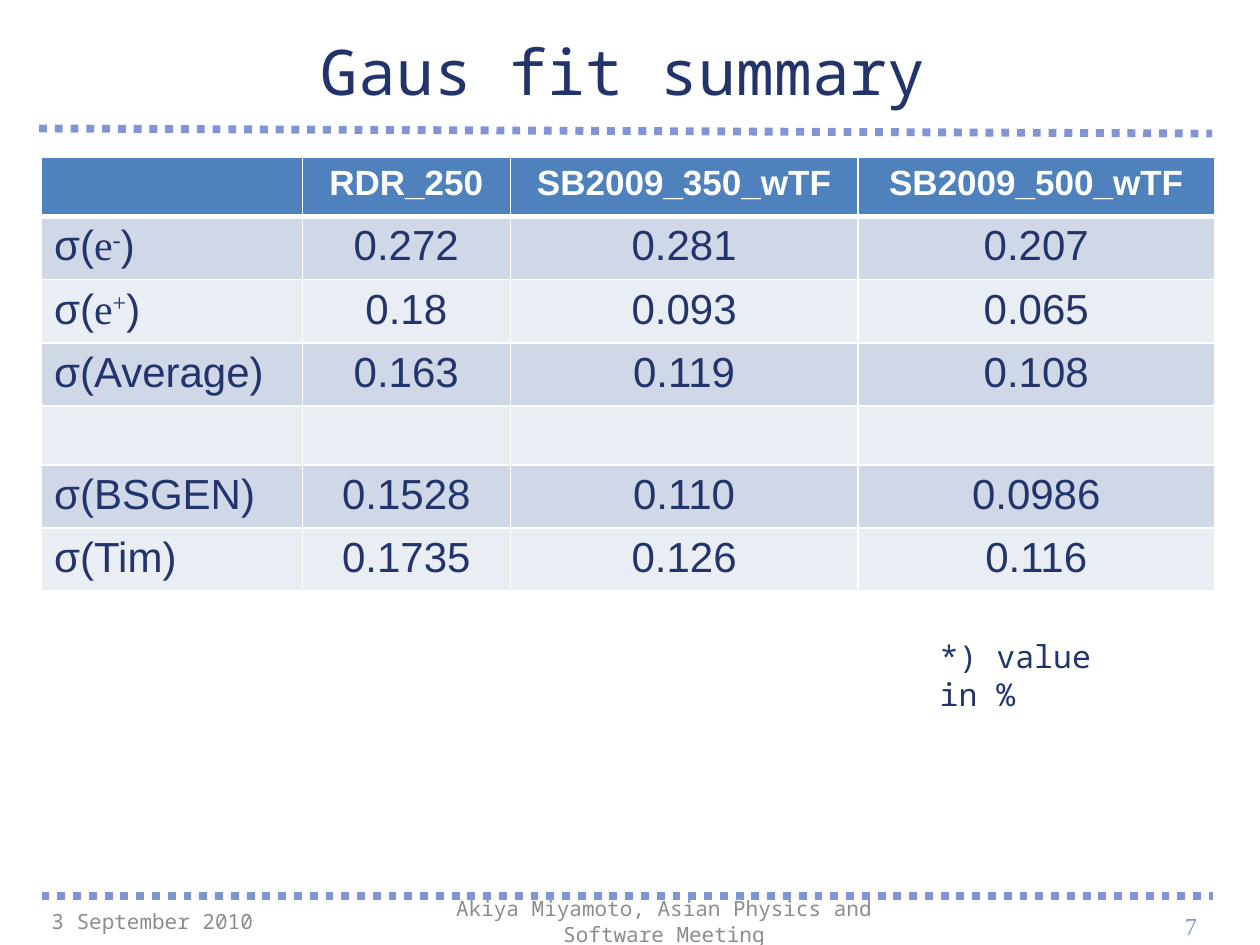
from lxml import etree
from pptx import Presentation
from pptx.dml.color import RGBColor
from pptx.enum import dml, shapes, text
from pptx.oxml import ns
from pptx.util import Inches, Pt

NAVY = RGBColor(0x23, 0x34, 0x6C)
PERIWINKLE = RGBColor(0x80, 0x94, 0xD6)
GRAY = RGBColor(0x8C, 0x8C, 0x8C)
WHITE = RGBColor(0xFF, 0xFF, 0xFF)
HEADER = RGBColor(0x4F, 0x81, 0xBD)
BANDS = RGBColor(0xE9, 0xED, 0xF4), RGBColor(0xD0, 0xD8, 0xE8)
MONO, SANS, SERIF = "Noto Sans Mono", "Arial", "Times New Roman"
LEFT, CENTER, RIGHT = text.PP_ALIGN.LEFT, text.PP_ALIGN.CENTER, text.PP_ALIGN.RIGHT
TOP, MIDDLE = text.MSO_ANCHOR.TOP, text.MSO_ANCHOR.MIDDLE

# start x, start y, end x, end y
RULES = [(0.33, 7.11, 9.63, 7.11), (0.31, 1.02, 9.62, 1.06)]

# words, (left, top, width, height), size, font, colour, alignment, anchor
TEXTS = [
    ("Gaus fit summary", (0.39, 0.23, 9.11, 0.66), 36, MONO, NAVY, CENTER, MIDDLE),
    ("7", (7.52, 7.18, 2.08, 0.25), 14, SERIF, PERIWINKLE, RIGHT, TOP),
    ("3 September 2010", (0.31, 7.19, 2.73, 0.24), 12, MONO, GRAY, LEFT, MIDDLE),
    ("Akiya Miyamoto, Asian Physics and Software Meeting",
     (3.28, 7.19, 3.98, 0.24), 12, MONO, GRAY, CENTER, MIDDLE),
    ("*) value in %", (7.36, 5.01, 1.62, 0.4), 18, MONO, NAVY, LEFT, TOP),
]

# A tuple holds the charge sign of an electron label
ROWS = [
    ["", "RDR_250", "SB2009_350_wTF", "SB2009_500_wTF"],
    [("e", "-"), "0.272", "0.281", "0.207"],
    [("e", "+"), "0.18", "0.093", "0.065"],
    ["σ(Average)", "0.163", "0.119", "0.108"],
    ["", "", "", ""],
    ["σ(BSGEN)", "0.1528", "0.110", "0.0986"],
    ["σ(Tim)", "0.1735", "0.126", "0.116"],
]
COL_WIDTHS = [2.07, 1.65, 2.76, 2.83]
ROW_HEIGHT = 0.47
TABLE_LEFT, TABLE_TOP = 0.33, 1.25


def add_run(p, words, size, font, color, bold=False, baseline=0):
    r = p.add_run()
    r.text = words
    r.font.size, r.font.name, r.font.bold = Pt(size), font, bold
    r.font.color.rgb = color
    if baseline:
        r._r.get_or_add_rPr().set("baseline", str(baseline))


def add_rule(slide, ends):
    line = slide.shapes.add_connector(shapes.MSO_CONNECTOR.STRAIGHT, *map(Inches, ends))
    line.line.color.rgb = PERIWINKLE
    line.line.width = Pt(4.5)
    line.line.dash_style = dml.MSO_LINE.ROUND_DOT  # written as sysDot
    etree.SubElement(line._element.spPr, ns.qn("a:effectLst"))


def add_text(slide, words, box, size, font, color, align, anchor):
    tf = slide.shapes.add_textbox(*map(Inches, box)).text_frame
    tf.word_wrap = True
    tf.vertical_anchor = anchor
    p = tf.paragraphs[0]
    p.alignment = align
    add_run(p, words, size, font, color)


def set_borders(cell, top, bottom):
    """White borders; the side lines are 1 pt. They must precede the fill."""
    tcPr = cell._tc.get_or_add_tcPr()
    for side, width in (("L", 1), ("R", 1), ("T", top), ("B", bottom)):
        ln = etree.SubElement(tcPr, ns.qn(f"a:ln{side}"), w=str(Pt(width)))
        fill = etree.SubElement(ln, ns.qn("a:solidFill"))
        etree.SubElement(fill, ns.qn("a:srgbClr"), val=str(WHITE))


def fill_cell(cell, value, row, col):
    set_borders(cell, 3 if row == 1 else 1, 3 if row == 0 else 1)
    cell.fill.solid()
    cell.fill.fore_color.rgb = BANDS[row % 2] if row else HEADER
    p = cell.text_frame.paragraphs[0]
    p.alignment = CENTER if col else LEFT
    if isinstance(value, tuple):
        particle, sign = value
        add_run(p, "σ(", 24, SANS, NAVY)
        add_run(p, particle, 24, SERIF, NAVY)
        add_run(p, sign, 24, SERIF, NAVY, baseline=30000)
        add_run(p, ")", 24, SANS, NAVY)
    elif value and row:
        add_run(p, value, 24, SANS, NAVY)
    elif value:
        add_run(p, value, 20, SANS, WHITE, bold=True)


def add_results(slide):
    frame = slide.shapes.add_table(
        len(ROWS), len(COL_WIDTHS), Inches(TABLE_LEFT), Inches(TABLE_TOP),
        Inches(sum(COL_WIDTHS)), Inches(ROW_HEIGHT * len(ROWS)))
    table = frame.table
    for column, width in zip(table.columns, COL_WIDTHS):
        column.width = Inches(width)
    for i, values in enumerate(ROWS):
        table.rows[i].height = Inches(ROW_HEIGHT)
        for j, value in enumerate(values):
            fill_cell(table.cell(i, j), value, i, j)


def main():
    prs = Presentation()
    prs.slide_width, prs.slide_height = Inches(10), Inches(7.5)
    slide = prs.slides.add_slide(prs.slide_layouts[6])
    for ends in RULES:
        add_rule(slide, ends)
    for item in TEXTS:
        add_text(slide, *item)
    add_results(slide)
    prs.save("out.pptx")


if __name__ == "__main__":
    main()
